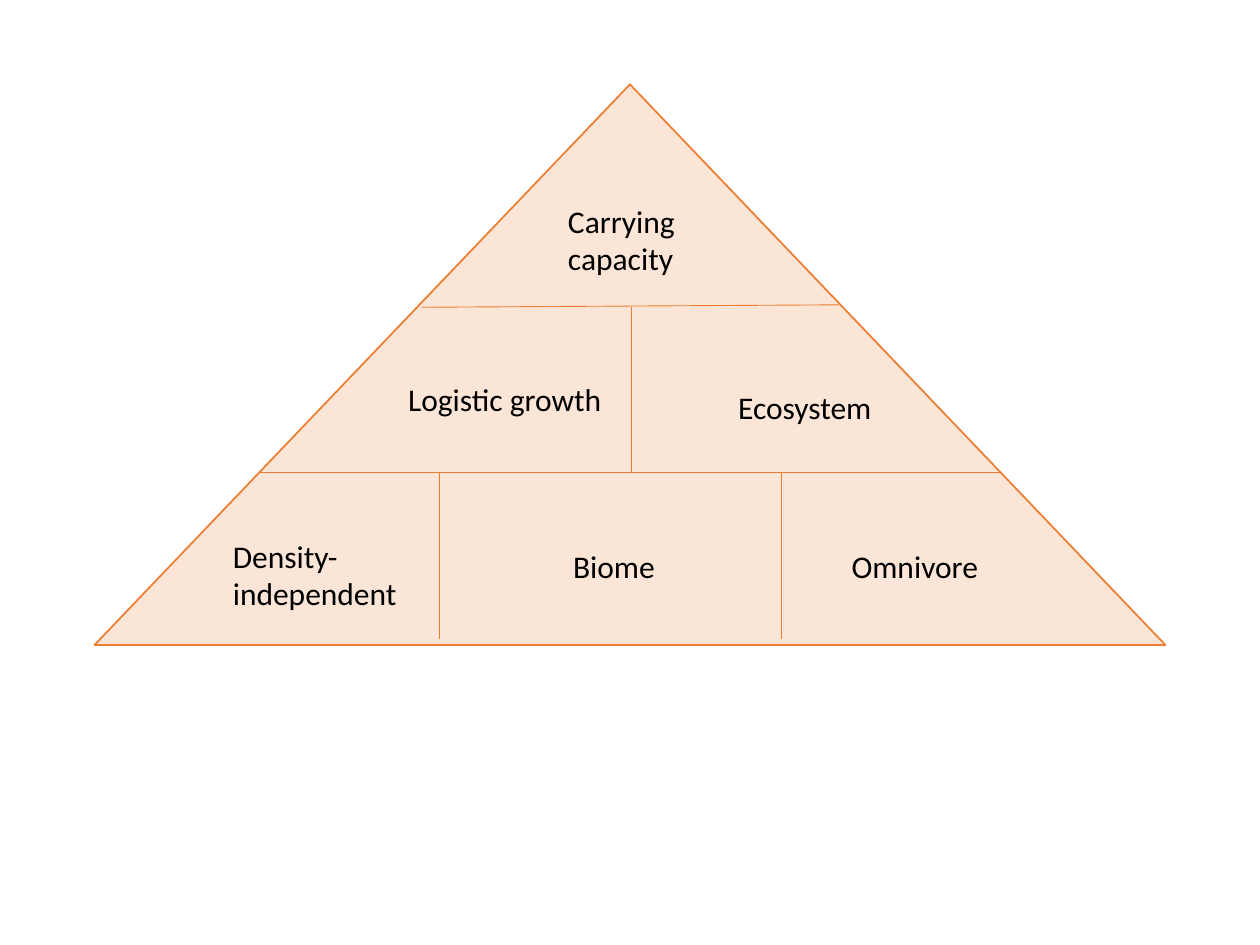
from dataclasses import dataclass

from lxml import etree
from pptx import Presentation
from pptx.dml.color import RGBColor
from pptx.enum.shapes import MSO_CONNECTOR, MSO_SHAPE
from pptx.enum.text import MSO_AUTO_SIZE, PP_ALIGN
from pptx.oxml.ns import qn
from pptx.util import Pt

TRIANGLE = MSO_SHAPE.ISOSCELES_TRIANGLE
STRAIGHT = MSO_CONNECTOR.STRAIGHT
FIT_SHAPE = MSO_AUTO_SIZE.SHAPE_TO_FIT_TEXT
LEFT = PP_ALIGN.LEFT


@dataclass(frozen=True)
class Theme:
    fill: RGBColor = RGBColor(0xFB, 0xE5, 0xD6)
    line: RGBColor = RGBColor(0xED, 0x7D, 0x31)
    text: RGBColor = RGBColor(0, 0, 0)
    font: str = "Calibri"
    text_size: float = 18
    outline_width: float = 1
    divider_width: float = 0.5


@dataclass(frozen=True)
class Box:
    left: float
    top: float
    width: float
    height: float


THEME = Theme()
PYRAMID = Box(54, 48.2, 612, 320.4)

TOP_TIER, MIDDLE_TIER, DIVIDER_END = 127.4, 221.8, 316.8
DIVIDERS = [
    (187.2, TOP_TIER, 425.5, 126),
    (94.3, MIDDLE_TIER, 518.4, MIDDLE_TIER),
    (306.7, TOP_TIER, 306.7, MIDDLE_TIER),
    (197.3, MIDDLE_TIER, 197.3, DIVIDER_END),
    (392.4, MIDDLE_TIER, 392.4, DIVIDER_END),
]

ONE_LINE, TWO_LINES = 29, 51
LABELS = [
    ("Carrying capacity", Box(263.5, 63.4, 105.8, TWO_LINES)),
    ("Logistic growth", Box(172.1, 165.6, 126, ONE_LINE)),
    ("Ecosystem", Box(360.7, 169.9, 127.4, ONE_LINE)),
    ("Density-independent", Box(72, 254.9, 125.3, TWO_LINES)),
    ("Biome", Box(266.4, 260.6, 115.2, ONE_LINE)),
    ("Omnivore", Box(425.5, 260.6, 92.9, ONE_LINE)),
]


def add_outline(slide, box):
    shape = slide.shapes.add_shape(
        TRIANGLE, Pt(box.left), Pt(box.top), Pt(box.width), Pt(box.height)
    )
    shape.shadow.inherit = False
    shape.fill.solid()
    shape.fill.fore_color.rgb = THEME.fill
    shape.line.color.rgb = THEME.line
    shape.line.width = Pt(THEME.outline_width)


def add_dividers(slide, box):
    for start_x, start_y, end_x, end_y in DIVIDERS:
        connector = slide.shapes.add_connector(
            STRAIGHT,
            Pt(box.left + start_x),
            Pt(box.top + start_y),
            Pt(box.left + end_x),
            Pt(box.top + end_y),
        )
        connector.line.color.rgb = THEME.line
        connector.line.width = Pt(THEME.divider_width)
        properties = connector._element.spPr
        etree.SubElement(properties, qn("a:effectLst"))


def add_labels(slide, box):
    for text, place in LABELS:
        shape = slide.shapes.add_textbox(
            Pt(box.left + place.left),
            Pt(box.top + place.top),
            Pt(place.width),
            Pt(place.height),
        )
        frame = shape.text_frame
        frame.word_wrap = True
        frame.auto_size = FIT_SHAPE
        paragraph = frame.paragraphs[0]
        paragraph.alignment = LEFT
        run = paragraph.add_run()
        run.text = text
        run.font.name = THEME.font
        run.font.size = Pt(THEME.text_size)
        run.font.color.rgb = THEME.text


def add_pyramid(slide, box):
    add_outline(slide, box)
    add_dividers(slide, box)
    add_labels(slide, box)


def main():
    presentation = Presentation()
    presentation.slide_width = Pt(720)
    presentation.slide_height = Pt(540)
    slide = presentation.slides.add_slide(presentation.slide_layouts[6])
    add_pyramid(slide, PYRAMID)
    presentation.save("out.pptx")


if __name__ == "__main__":
    main()
